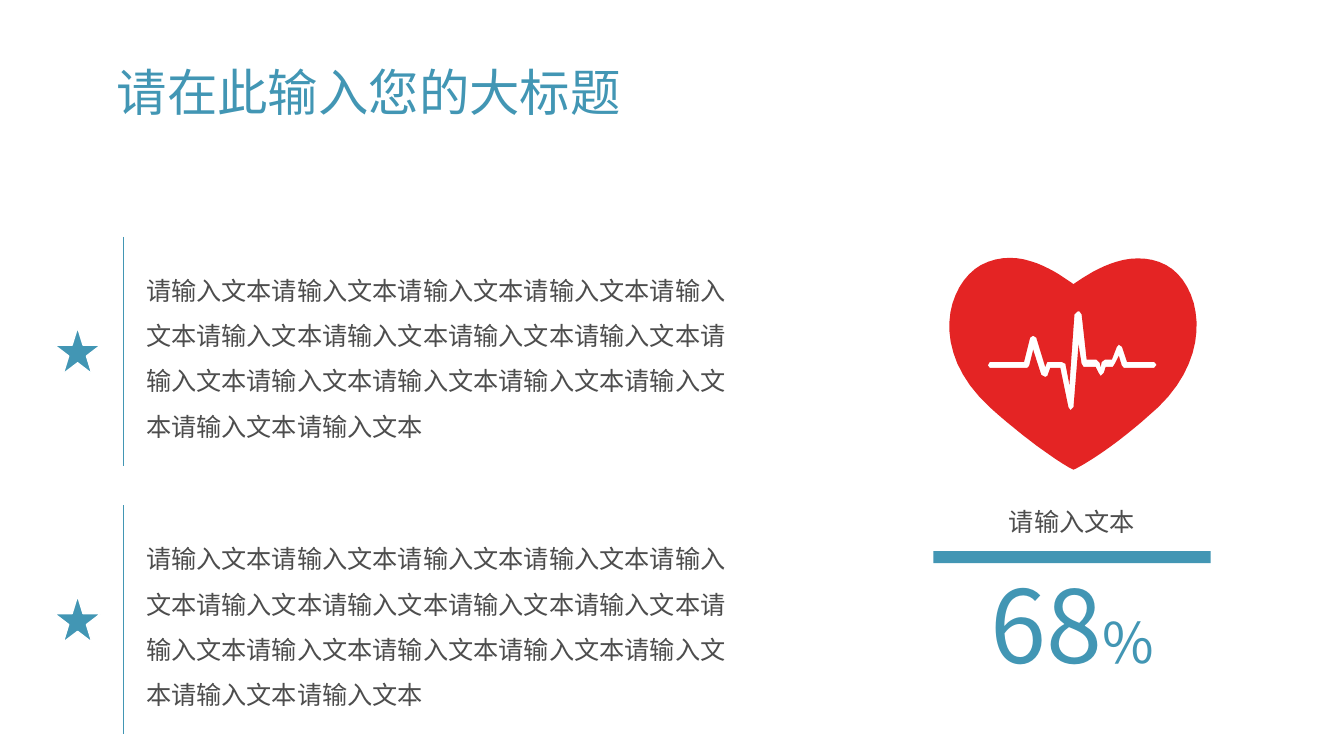
from lxml.etree import SubElement
from pptx import Presentation
from pptx.dml.color import RGBColor
from pptx.enum.shapes import MSO_CONNECTOR, MSO_SHAPE
from pptx.enum.text import MSO_ANCHOR, MSO_AUTO_SIZE, PP_ALIGN
from pptx.oxml.ns import qn
from pptx.util import Pt

FONT = "Noto Sans CJK SC"
BLUE, GREY, RED, WHITE = "4296B4", "4D4D4D", "E42424", "FFFFFF"


def paint(target, color):
    if hasattr(target, "solid"):
        target.solid()
        target = target.fore_color
    target.rgb = RGBColor.from_string(color)


def add_text(place, spans, color, frame_format, para_format):
    box = page.shapes.add_textbox(*map(Pt, place))
    frame = box.text_frame
    for name, value in ({"word_wrap": True} | frame_format).items():
        setattr(frame, name, value)
    para = frame.paragraphs[0]
    for name, value in para_format.items():
        setattr(para, name, value)
    for text, size in spans:
        span = para.add_run()
        span.text = text
        span.font.size = Pt(size)
        span.font.name = FONT
        paint(span.font.color, color)
        SubElement(span._r.get_or_add_rPr(), qn("a:ea"), typeface=FONT)


deck = Presentation()
deck.slide_width, deck.slide_height = Pt(960), Pt(540)
page = deck.slides.add_slide(deck.slide_layouts[6])
middle = {"vertical_anchor": MSO_ANCHOR.MIDDLE}

add_text((76.3, 34.6, 762.5, 67), [("请在此输入您的大标题", 36)], BLUE,
         middle, {"line_spacing": 0.9})

bar = page.shapes.add_shape(MSO_SHAPE.RECTANGLE, Pt(666.7), Pt(393.6), Pt(198), Pt(8.6))
bar.shadow.inherit = False
paint(bar.fill, BLUE)
bar.line.fill.background()

no_margins = {f"margin_{side}": 0 for side in ("left", "top", "right", "bottom")}
add_text((666.7, 401.8, 198, 87.1), [("68", 72), ("%", 40)], BLUE,
         no_margins | {"auto_size": MSO_AUTO_SIZE.SHAPE_TO_FIT_TEXT},
         {"alignment": PP_ALIGN.CENTER})
add_text((666.7, 347, 198, 40.3), [("请输入文本", 18)], GREY, middle,
         {"alignment": PP_ALIGN.CENTER, "line_spacing": 1.5})

heart_start = (700.6, 189.4)
heart_curves = [
    ((728.6, 174.2), (757.4, 196.6), (766.8, 203)),
    ((776.2, 196.6), (805.7, 175), (833, 189.4)),
    ((856.8, 202.3), (869, 250.6), (827.3, 290.9)),
    ((792.7, 322.6), (769, 334.8), (766.8, 335.5)),
    ((764.6, 334.8), (741.6, 321.8), (707, 290.9)),
    ((662.4, 249.8), (676.8, 203), heart_start),
]
pulse = [
    (707, 262.8), (733.7, 262.8), (735.1, 261.4), (738, 249.8), (743.8, 267.8),
    (746.6, 269.3), (748.1, 268.6), (750.2, 262.8), (757.4, 262.8), (763.2, 290.9),
    (764.6, 293), (766.8, 290.9), (770.4, 246.2), (772.6, 259.9), (774, 262.1),
    (782.6, 262.1), (784.8, 266.4), (786.2, 268.6), (788.4, 266.4), (789.8, 262.1),
    (794.9, 262.1), (796.3, 259.9), (799.2, 254.2), (801.4, 261.4), (802.8, 262.8),
    (824.4, 262.8), (826.2, 260.6), (824.4, 258.5), (805, 258.5), (801.4, 247.7),
    (799.2, 246.2), (797.8, 247.7), (794.2, 257), (789.1, 257), (787, 258.5),
    (786.2, 262.1), (785.5, 259.2), (783.4, 257), (776.2, 257), (772.6, 224.6),
    (771.1, 222.5), (769.7, 222.5), (767.5, 224.6), (763.9, 275), (761, 259.9),
    (758.2, 258.5), (748.1, 258.5), (746.6, 262.1), (740.2, 241.2), (738, 239.8),
    (735.8, 241.2), (731.5, 258.5), (707, 258.5), (705.6, 261),
]
outline = [heart_start]
for first, second, end in heart_curves:
    start = outline[-1]
    for step in range(1, 17):
        t = step / 16
        weights = ((1 - t) ** 3, 3 * t * (1 - t) ** 2, 3 * t * t * (1 - t), t ** 3)
        corners = (start, first, second, end)
        outline.append(tuple(sum(w * c[axis] for w, c in zip(weights, corners))
                             for axis in (0, 1)))

heart_tenths, pulse_tenths = [[(round(x * 10), round(y * 10)) for x, y in points]
                              for points in (outline, pulse)]
builder = page.shapes.build_freeform(*heart_tenths[0], scale=Pt(0.1))
builder.add_line_segments(heart_tenths[1:], close=True)
builder.move_to(*pulse_tenths[0])
builder.add_line_segments(pulse_tenths[1:], close=True)
heart = builder.convert_to_shape()
heart.shadow.inherit = False
paint(heart.fill, RED)
heart.line.fill.background()

for top in (169.2, 361):
    add_text((97.2, top + 0.6, 432.7, 161.3), [("请输入文本" * 16, 18)], GREY,
             middle, {"line_spacing": 1.5})
    star = page.shapes.add_shape(MSO_SHAPE.STAR_5_POINT, Pt(38.9), Pt(top + 64.7),
                                 Pt(33.1), Pt(33.1))
    star.shadow.inherit = False
    paint(star.fill, BLUE)
    paint(star.line.color, WHITE)
    star.line.width = Pt(1)
    rule = page.shapes.add_connector(MSO_CONNECTOR.STRAIGHT, Pt(87.8), Pt(top),
                                     Pt(87.8), Pt(top + 163.4))
    paint(rule.line.color, BLUE)
    rule.line.width = Pt(0.5)
    SubElement(rule._element.spPr, qn("a:effectLst"))

deck.save("out.pptx")
